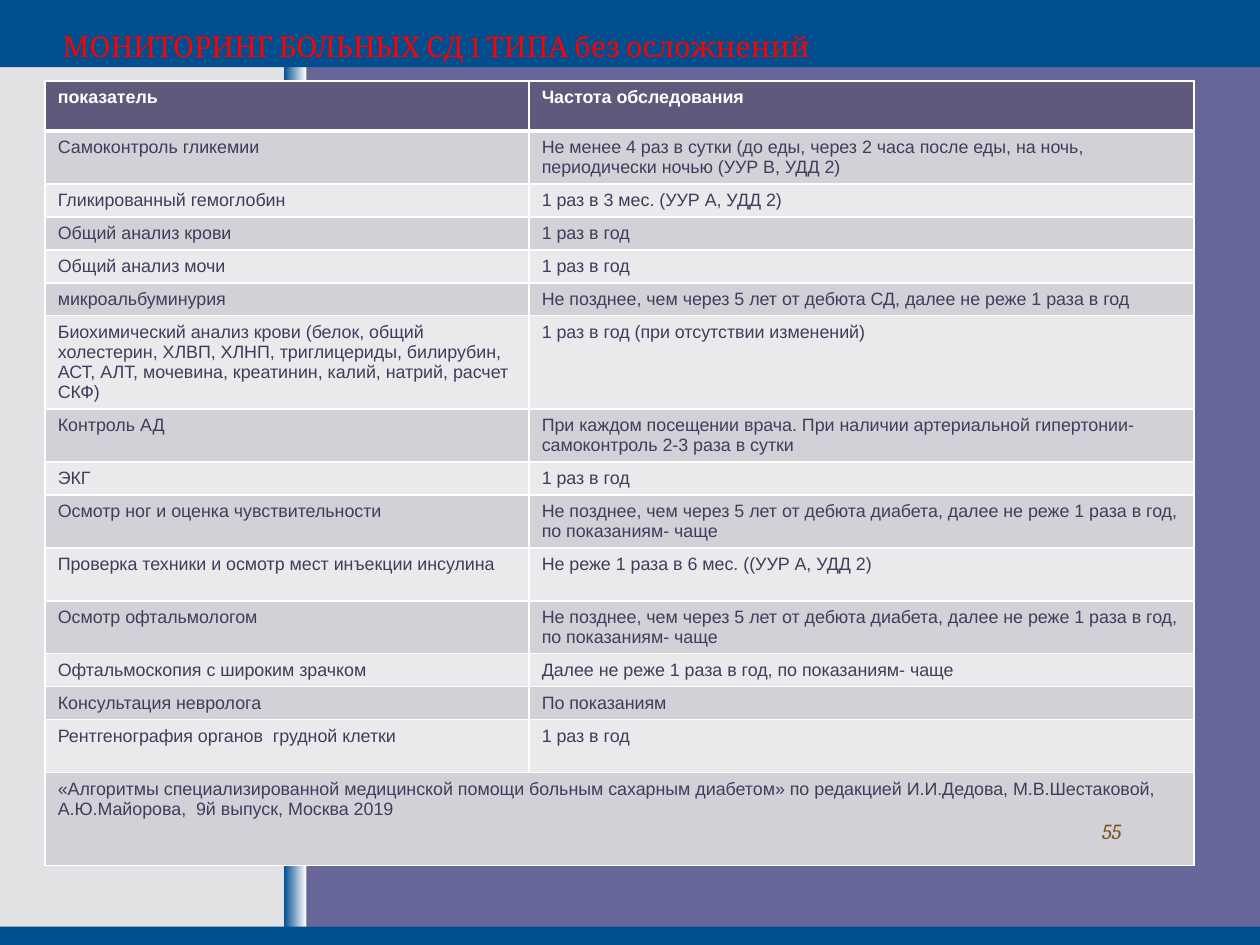
import dataclasses
import pptx
import pptx.dml.color
import pptx.enum.shapes
import pptx.enum.text
import pptx.oxml
import pptx.oxml.ns
import pptx.util

Pt = pptx.util.Pt
Align = pptx.enum.text.PP_ALIGN
Anchor = pptx.enum.text.MSO_ANCHOR


@dataclasses.dataclass(frozen=True)
class Theme:
    """Colours, fonts and type sizes of the deck."""
    back: str = "666699"
    band: str = "004E8E"
    panel: str = "E1E2E3"
    white: str = "FFFFFF"
    title: str = "FF0000"
    head: str = "60597B"
    text: str = "3E3E5C"
    odd: str = "D2D1D7"
    even: str = "EAEAEC"
    number: str = "79551B"
    serif: str = "Cambria"
    sans: str = "Arial"
    big: float = 16
    mid: float = 12
    small: float = 10


THEME = Theme()
WIDE, HIGH = 705.6, 529.2
LINE, PAD = 11.25, 7.2

HEADS = ("показатель", "Частота обследования")
YEARLY = "1 раз в год"
LATER = "Не позднее, чем через 5 лет от дебюта диабета, далее не реже 1 раза в год, по показаниям- чаще"
ROWS = [
    (2, "Самоконтроль гликемии",
     "Не менее 4 раз в сутки (до еды, через 2 часа после еды, на ночь, периодически ночью (УУР В, УДД 2)"),
    (1, "Гликированный гемоглобин", "1 раз в 3 мес. (УУР А, УДД 2)"),
    (1, "Общий анализ крови", YEARLY),
    (1, "Общий анализ мочи", YEARLY),
    (1, "микроальбуминурия", "Не позднее, чем через 5 лет от дебюта СД, далее не реже 1 раза в год"),
    (4, "Биохимический анализ крови (белок, общий холестерин, ХЛВП, ХЛНП, триглицериды, билирубин, "
        "АСТ, АЛТ, мочевина, креатинин, калий, натрий, расчет СКФ)", "1 раз в год (при отсутствии изменений)"),
    (2, "Контроль АД",
     "При каждом посещении врача. При наличии артериальной гипертонии- самоконтроль 2-3 раза в сутки"),
    (1, "ЭКГ", YEARLY),
    (2, "Осмотр ног и оценка чувствительности", LATER),
    (2, "Проверка техники и осмотр мест инъекции инсулина", "Не реже 1 раза в 6 мес. ((УУР А, УДД 2)"),
    (2, "Осмотр офтальмологом", LATER),
    (1, "Офтальмоскопия с широким зрачком", "Далее не реже 1 раза в год, по показаниям- чаще"),
    (1, "Консультация невролога", "По показаниям"),
    (2, "Рентгенография органов  грудной клетки", YEARLY),
    (4, "«Алгоритмы специализированной медицинской помощи больным сахарным диабетом» по редакцией "
        "И.И.Дедова, М.В.Шестаковой, А.Ю.Майорова,  9й выпуск, Москва 2019", ""),
]


def tint(name):
    """Turn a hex string into a colour."""
    return pptx.dml.color.RGBColor.from_string(name)


def assign(item, values):
    """Set each attribute of the item from a dict."""
    for key, value in values.items():
        setattr(item, key, value)


def place(item, box):
    """Move and size an item to a box in points."""
    assign(item, dict(zip(("left", "top", "width", "height"), map(Pt, box))))


def write(frame, text, face, size, colour, align=Align.LEFT, **style):
    """Write one formatted paragraph into a text frame."""
    frame.word_wrap = True
    para = frame.paragraphs[0]
    para.alignment = align
    run = para.add_run()
    run.text = text
    assign(run.font, {"name": face, "size": Pt(size), "bold": False, "italic": False, **style})
    run.font.color.rgb = tint(colour)


def add_block(slide, box, *tones):
    """Add a plain or two-tone block behind the title."""
    block = slide.shapes.add_shape(pptx.enum.shapes.MSO_SHAPE.RECTANGLE, *map(Pt, box))
    block.shadow.inherit = False
    block.line.fill.background()
    if len(tones) == 1:
        block.fill.solid()
        block.fill.fore_color.rgb = tint(tones[0])
    else:
        block.fill.gradient()
        block.fill.gradient_angle = 0
        for stop, tone in zip(block.fill.gradient_stops, tones):
            stop.color.rgb = tint(tone)
    slide.shapes.title.element.addprevious(block.element)


def add_back(slide, box):
    """Build the side panel, the strip and both bands."""
    left, top, width, height = box
    slide.background.fill.solid()
    slide.background.fill.fore_color.rgb = tint(THEME.back)
    add_block(slide, (left, top, 159.5, height), THEME.panel)
    add_block(slide, (left + 159, top, 12.5, height), THEME.band, THEME.white)
    add_block(slide, (left, top, width, 37.6), THEME.band)
    add_block(slide, (left, top + height - 10.2, width, 10.2), THEME.band)


def add_title(slide, box):
    """Fill the title placeholder."""
    title = slide.shapes.title
    place(title, box)
    title.text_frame.vertical_anchor = Anchor.MIDDLE
    write(title.text_frame, "МОНИТОРИНГ БОЛЬНЫХ СД 1 ТИПА без осложнений",
          THEME.serif, THEME.big, THEME.title)


def edge(cell, base):
    """Draw white borders around a cell."""
    props = cell._tc.get_or_add_tcPr()
    space = pptx.oxml.ns.nsdecls("a")
    for spot, (side, width) in enumerate(zip("LRTB", (1, 1, 1, base))):
        props.insert(spot, pptx.oxml.parse_xml(
            f'<a:ln{side} {space} w="{Pt(width)}"><a:solidFill>'
            f'<a:srgbClr val="{THEME.white}"/></a:solidFill></a:ln{side}>'))


def add_cell(cell, text, fill, colour, bold, base):
    """Fill, frame and write one table cell."""
    cell.fill.solid()
    cell.fill.fore_color.rgb = tint(fill)
    edge(cell, base)
    if text:
        write(cell.text_frame, text, THEME.sans, THEME.small, colour, bold=bold)


def add_plan(slide, box):
    """Build the table of checks and their timing."""
    width = box[2]
    table = slide.shapes.add_table(len(ROWS) + 1, 2, *map(Pt, box)).table
    first = 271
    for col, span in zip(table.columns, (first, width - first)):
        col.width = Pt(span)
    table.rows[0].height = Pt(28)
    for cell, text in zip(table.rows[0].cells, HEADS):
        add_cell(cell, text, THEME.head, THEME.white, True, 3)
    for spot, (lines, *texts) in enumerate(ROWS, 1):
        row = table.rows[spot]
        row.height = Pt(lines * LINE + PAD)
        fill = THEME.odd if spot % 2 else THEME.even
        for cell, text in zip(row.cells, texts):
            add_cell(cell, text, fill, THEME.text, False, 1)
    last = len(ROWS)
    table.cell(last, 0).merge(table.cell(last, 1))


def add_number(slide, box):
    """Add the page number at the right of its box."""
    frame = slide.shapes.add_textbox(*map(Pt, box)).text_frame
    write(frame, "55", THEME.serif, THEME.mid, THEME.number, Align.RIGHT, italic=True)


def main():
    """Build and save the slide."""
    deck = pptx.Presentation()
    assign(deck, {"slide_width": Pt(WIDE), "slide_height": Pt(HIGH)})
    slide = deck.slides.add_slide(deck.slide_layouts[5])
    add_back(slide, (0, 0, WIDE, HIGH))
    add_title(slide, (28, 0, 633, 52))
    add_plan(slide, (25.2, 45.4, 643.6, 440))
    add_number(slide, (499.7, 454.3, 135.4, 29.5))
    deck.save("out.pptx")


if __name__ == "__main__":
    main()
